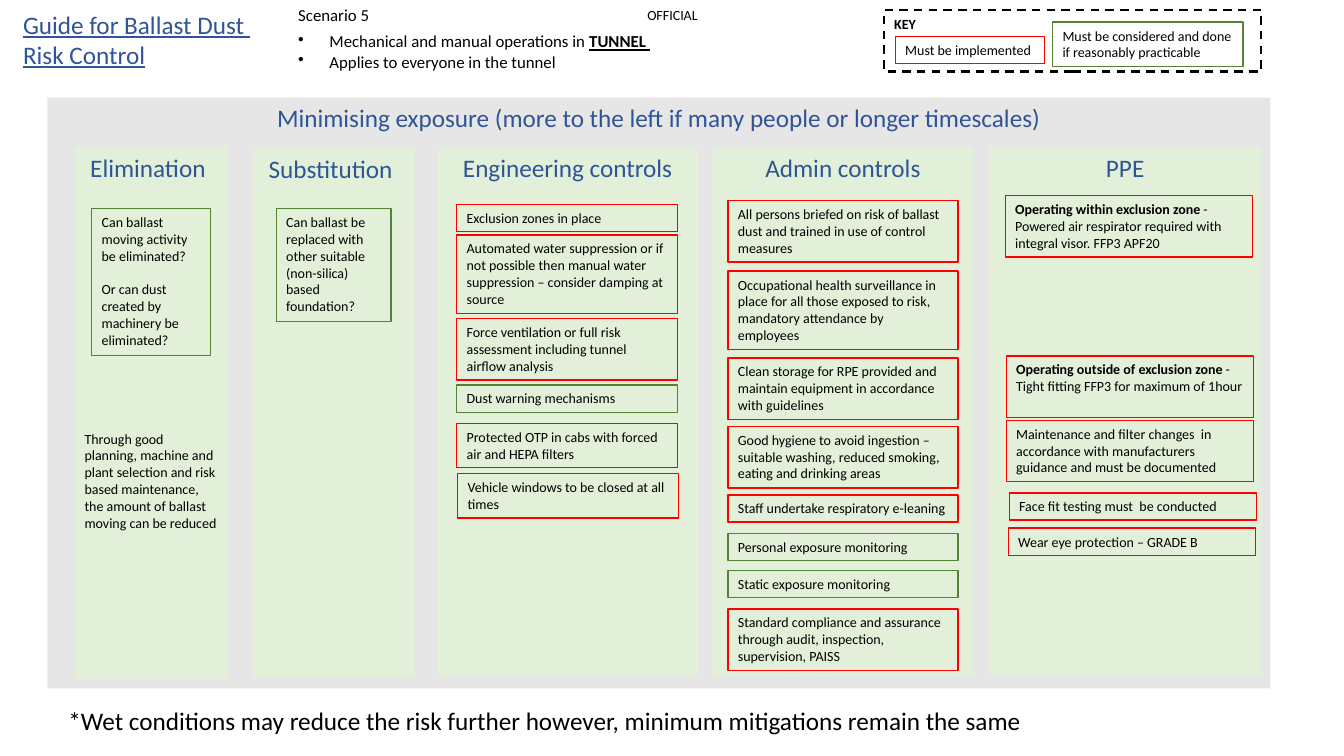
import pptx
import pptx.util
import pptx.dml.color
import pptx.enum.dml
import pptx.enum.shapes
import pptx.enum.text
import pptx.oxml.ns
import lxml.etree

PX = 9144  # EMU per px, 100 px to the inch
HUES = {"ink": "000000", "blue": "2F5597", "must": "FF0000", "should": "548235",
        "grey": "E7E6E6", "pale": "E2F0D9"}
ALIGN = pptx.enum.text.PP_ALIGN
ANCHOR = pptx.enum.text.MSO_ANCHOR


def hue(name):
    return pptx.dml.color.RGBColor.from_string(HUES[name])


class Board:
    def __init__(self, slide, font):
        self.slide = slide
        self.font = font

    def fill(self, frame, paras, size, color="ink", align=ALIGN.LEFT, gap=0):
        """Fill a frame; a paragraph is a list of (text, marks), marks from b and u."""
        frame.word_wrap = True
        frame.vertical_anchor = ANCHOR.TOP
        for i, runs in enumerate(paras):
            para = frame.paragraphs[0] if i == 0 else frame.add_paragraph()
            para.alignment = align
            if i and gap:
                para.space_before = pptx.util.Pt(gap)
            for text, marks in runs:
                self.run(para, text, size, color, marks)

    def run(self, para, text, size, color, marks=""):
        run = para.add_run()
        run.text = text
        font = run.font
        font.name = self.font
        font.size = pptx.util.Pt(size)
        font.color.rgb = hue(color)
        font.bold = "b" in marks
        font.underline = "u" in marks

    def rect(self, box, fill=None, line=None, width=1, dash=False):
        shape = self.slide.shapes.add_shape(
            pptx.enum.shapes.MSO_SHAPE.RECTANGLE, *[v * PX for v in box])
        shape.shadow.inherit = False
        if fill:
            shape.fill.solid()
            shape.fill.fore_color.rgb = hue(fill)
        else:
            shape.fill.background()
        if line:
            shape.line.color.rgb = hue(line)
            shape.line.width = pptx.util.Pt(width)
            if dash:
                shape.line.dash_style = pptx.enum.dml.MSO_LINE.DASH
        else:
            shape.line.fill.background()
        return shape.text_frame

    def text(self, box, paras, size, **style):
        shape = self.slide.shapes.add_textbox(*[v * PX for v in box])
        self.fill(shape.text_frame, paras, size, **style)
        return shape.text_frame

    def panel(self, box, title, fill="pale", align=ALIGN.CENTER):
        frame = self.rect(box, fill)
        self.fill(frame, [[(title, "")]], 18, "blue", align)
        return frame

    def note(self, x, y, w, lines, kind, *paras):
        """Outlined control, as tall as its count of 10 pt lines."""
        frame = self.rect((x, y, w, 10 + 17 * lines), line=kind)
        runs = [[(p, "")] if isinstance(p, str) else p for p in paras]
        self.fill(frame, runs, 10, gap=12)

    def bullet(self, para, indent):
        props = para._p.get_or_add_pPr()
        props.set("marL", str(indent * PX))
        props.set("indent", str(-indent * PX))
        mark = lxml.etree.SubElement(props, pptx.oxml.ns.qn("a:buChar"))
        mark.set("char", "•")


# title, panel box, heading alignment, note width, notes (x, y, lines, kind, text)
COLUMNS = [
    (" Elimination", (74, 146, 151, 528), ALIGN.LEFT, 118, [
        (91, 207, 8, "should", "Can ballast moving activity be eliminated?",
         "Or can dust created by machinery be eliminated?")]),
    (" Substitution", (251, 147, 160, 525), ALIGN.LEFT, 114, [
        (274, 207, 6, "should",
         "Can ballast be replaced with other suitable (non-silica) based foundation?")]),
    ("Engineering controls", (434, 146, 258, 525), ALIGN.CENTER, 219, [
        (453, 203, 1, "must", "Exclusion zones in place"),
        (453, 233, 4, "must", "Automated water suppression or if not possible then manual "
                              "water suppression – consider damping at source"),
        (453, 316, 3, "must",
         "Force ventilation or full risk assessment including tunnel airflow analysis"),
        (453, 382, 1, "should", "Dust warning mechanisms"),
        (453, 420, 2, "must", "Protected OTP in cabs with forced air and HEPA filters"),
        (454, 470, 2, "must", "Vehicle windows to be closed at all times")]),
    ("Admin controls", (707, 146, 258, 525), ALIGN.CENTER, 228, [
        (722, 199, 3, "must", "All persons briefed on risk of ballast dust and trained in "
                              "use of control measures"),
        (722, 269, 4, "must", "Occupational health surveillance in place for all those "
                              "exposed to risk, mandatory attendance by employees"),
        (722, 355, 3, "must", "Clean storage for RPE provided and maintain equipment in "
                              "accordance with guidelines"),
        (722, 423, 3, "must", "Good hygiene to avoid ingestion – suitable washing, reduced "
                              "smoking, eating and drinking areas"),
        (722, 491, 1, "must", "Staff undertake respiratory e-leaning"),
        (722, 529, 1, "should", "Personal exposure monitoring"),
        (722, 566, 1, "should", "Static exposure monitoring"),
        (722, 604, 3, "must", "Standard compliance and assurance through audit, inspection, "
                              "supervision, PAISS")]),
    ("PPE", (981, 146, 270, 525), ALIGN.CENTER, 245, [
        (997, 194, 3, "must", [
            ("Operating within exclusion zone ", "b"),
            ("- Powered air respirator required with integral visor. FFP3 APF20", "")]),
        (998, 353, 3, "must", [
            ("Operating outside of exclusion zone ", "b"),
            ("- Tight fitting FFP3 for maximum of 1hour", "")]),
        (998, 417, 3, "must", "Maintenance and filter changes  in accordance with "
                              "manufacturers guidance and must be documented"),
        (1001, 489, 1, "must", "Face fit testing must  be conducted"),
        (1000, 524, 1, "must", "Wear eye protection – GRADE B")]),
]


def header(board):
    label = board.text((627, 0, 80, 29), [[("OFFICIAL", "")]], 10, align=ALIGN.CENTER)
    label.margin_left = label.margin_right = label.margin_top = label.margin_bottom = 0
    label.vertical_anchor = ANCHOR.MIDDLE
    board.text((13, 4, 289, 71), [[("Guide for Ballast Dust ", "u")], [("Risk Control", "u")]],
               18, color="blue")
    board.text((286, 0, 524, 30), [[("Scenario 5", "")]], 12)
    scope = board.text((286, 26, 524, 50), [
        [("Mechanical and manual operations in ", ""), ("TUNNEL ", "bu")],
        [("Applies to everyone in the tunnel", "")]], 12)
    for para in scope.paragraphs:
        board.bullet(para, 31)


def legend(board):
    key = board.rect((877, 10, 374, 61), line="ink", width=1.5, dash=True)
    board.fill(key, [[("KEY", "b")]], 10)
    board.note(888, 36, 148, 1, "must", "Must be implemented")
    board.note(1044, 22, 189, 2, "should",
               "Must be considered and done if reasonably practicable")


def controls(board):
    board.panel((47, 97, 1213, 586),
                "Minimising exposure (more to the left if many people or longer timescales)",
                "grey")
    for title, box, align, wide, notes in COLUMNS:
        frame = board.panel(box, title, align=align)
        if title == " Elimination":
            para = frame.add_paragraph()
            para.alignment = align
            para.space_before = pptx.util.Pt(177)
            board.run(para, "Through good planning, machine and plant selection and risk based "
                            "maintenance, the amount of ballast moving can be reduced", 10, "ink")
        for x, y, lines, kind, *paras in notes:
            board.note(x, y, wide, lines, kind, *paras)


def main():
    deck = pptx.Presentation()
    deck.slide_width, deck.slide_height = 1333 * PX, 750 * PX
    board = Board(deck.slides.add_slide(deck.slide_layouts[6]), "Calibri")
    header(board)
    legend(board)
    controls(board)
    board.text((58, 695, 1088, 40), [[("*Wet conditions may reduce the risk further however, "
                                       "minimum mitigations remain the same", "")]], 18)
    deck.save("out.pptx")


if __name__ == "__main__":
    main()
